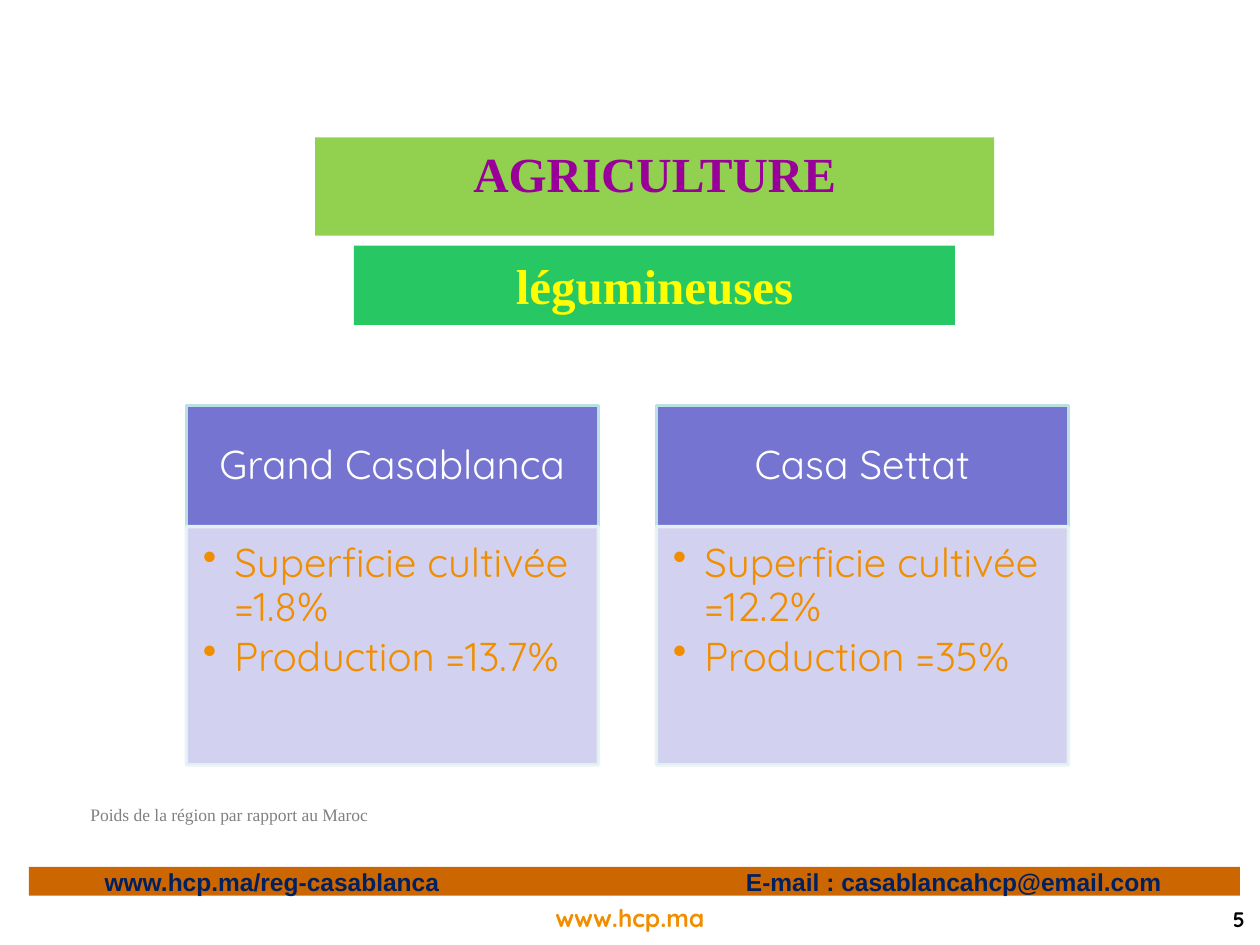
from lxml import etree
from pptx import Presentation
from pptx import util as u
from pptx.dml.color import RGBColor
from pptx.enum import shapes, text
from pptx.oxml.ns import qn

LEFT, MID, RIGHT = text.PP_ALIGN.LEFT, text.PP_ALIGN.CENTER, text.PP_ALIGN.RIGHT
TOP, CENTER = text.MSO_ANCHOR.TOP, text.MSO_ANCHOR.MIDDLE
SERIF, ROUND, SANS = "Times New Roman", "Quicksand", "Arial"
PAD = (0.1, 0.05, 0.1, 0.05)


def paint(color, value):
    """Set a colour from a hex string."""
    color.rgb = RGBColor.from_string(value)


def fade(part, alpha):
    """Make the solid fill under an element partly clear."""
    for node in part.iter(qn("a:srgbClr")):
        etree.SubElement(node, qn("a:alpha")).set("val", str(alpha * 1000))


def frame(shape, anchor, pad=PAD):
    """Set up wrapping, anchor and insets of a shape's text."""
    body = shape.text_frame
    body.word_wrap = True
    body.vertical_anchor = anchor
    body.margin_left, body.margin_top, body.margin_right, body.margin_bottom = map(u.Inches, pad)
    return body


def block(slide, box, fill, line=None):
    """Add a flat rectangle."""
    shape = slide.shapes.add_shape(shapes.MSO_SHAPE.RECTANGLE, *map(u.Inches, box))
    shape.shadow.inherit = False
    shape.fill.solid()
    paint(shape.fill.fore_color, fill)
    if line:
        paint(shape.line.color, line)
        shape.line.width = u.Pt(2)
    else:
        shape.line.fill.background()
    return shape


def write(para, words, size, font, color, bold=False, align=MID):
    """Add one styled run to a paragraph."""
    para.alignment = align
    run = para.add_run()
    run.text = words
    run.font.size = u.Pt(size)
    run.font.name = font
    run.font.bold = bold
    paint(run.font.color, color)


def banner(slide, box, words, fill, color, anchor):
    """Add a filled heading bar."""
    body = frame(block(slide, box, fill), anchor)
    write(body.paragraphs[0], words, 28, SERIF, color, True)


def label(slide, box, words, size, font, color, bold, align, anchor=TOP):
    """Add a plain line of text."""
    body = frame(slide.shapes.add_textbox(*map(u.Inches, box)), anchor)
    write(body.paragraphs[0], words, size, font, color, bold, align)


def card(slide, box, title, items):
    """Add a region card: a head above a bulleted list."""
    left, top, width, height = box
    head = 0.96
    shape = block(slide, (left, top, width, head), "7575D1", "BBE0E3")
    body = frame(shape, CENTER, (0.18, 0.1, 0.18, 0.1))
    body.paragraphs[0].line_spacing = 0.9
    write(body.paragraphs[0], title, 23, ROUND, "FFFFFF")

    shape = block(slide, (left, top + head, width, height - head), "CECEEF", "E7F3F4")
    fade(shape.element.spPr, 90)
    body = frame(shape, TOP, (0.13, 0.13, 0.18, 0.2))
    for i, item in enumerate(items):
        para = body.add_paragraph() if i else body.paragraphs[0]
        para.level = 1
        props = para._p.get_or_add_pPr()
        props.set("marL", str(u.Inches(0.25)))
        props.set("indent", str(-u.Inches(0.25)))
        etree.SubElement(props, qn("a:buChar")).set("char", "•")
        para.line_spacing = 0.9
        para.space_after = u.Pt(4)
        write(para, item, 23, ROUND, "F18E00", align=LEFT)


def footer(slide, box, site, mail):
    """Add the contact bar, with the mail address at a tab stop."""
    body = frame(block(slide, box, "CC6600"), CENTER, (0.6, 0, 0.1, 0))
    para = body.paragraphs[0]
    tabs = etree.SubElement(para._p.get_or_add_pPr(), qn("a:tabLst"))
    stop = etree.SubElement(tabs, qn("a:tab"))
    stop.set("pos", str(u.Inches(5.09)))
    stop.set("algn", "l")
    write(para, site + "\t" + mail, 14, SANS, "002060", True, LEFT)


def main():
    """Build and save the slide."""
    deck = Presentation()
    deck.slide_width, deck.slide_height = u.Inches(10), u.Inches(7.5)
    slide = deck.slides.add_slide(deck.slide_layouts[6])
    banner(slide, (2.5, 1.09, 5.39, 0.78), "AGRICULTURE", "92D050", "990099", TOP)
    banner(slide, (2.81, 1.95, 4.77, 0.63), "légumineuses", "27C764", "FFFF00", CENTER)
    regions = (("Grand Casablanca", "1.8%", "13.7%"), ("Casa Settat", "12.2%", "35%"))
    for i, (name, area, yld) in enumerate(regions):
        items = (f"Superficie cultivée ={area}", f"Production ={yld}")
        card(slide, (1.48 + 3.73 * i, 3.22, 3.27, 2.85), name, items)
    label(slide, (0.62, 6.33, 6.94, 0.27), "Poids de la région par rapport au Maroc",
          10, SERIF, "808080", False, LEFT)
    footer(slide, (0.23, 6.88, 9.61, 0.23), "www.hcp.ma/reg-casablanca",
           "E-mail : casablancahcp@email.com")
    label(slide, (3.82, 7.12, 2.36, 0.33), "www.hcp.ma", 14, ROUND, "F18E00", True, MID)
    label(slide, (8.46, 7.12, 1.52, 0.35), "5", 12, ROUND, "000000", True, RIGHT, CENTER)
    deck.save("out.pptx")


if __name__ == "__main__":
    main()
